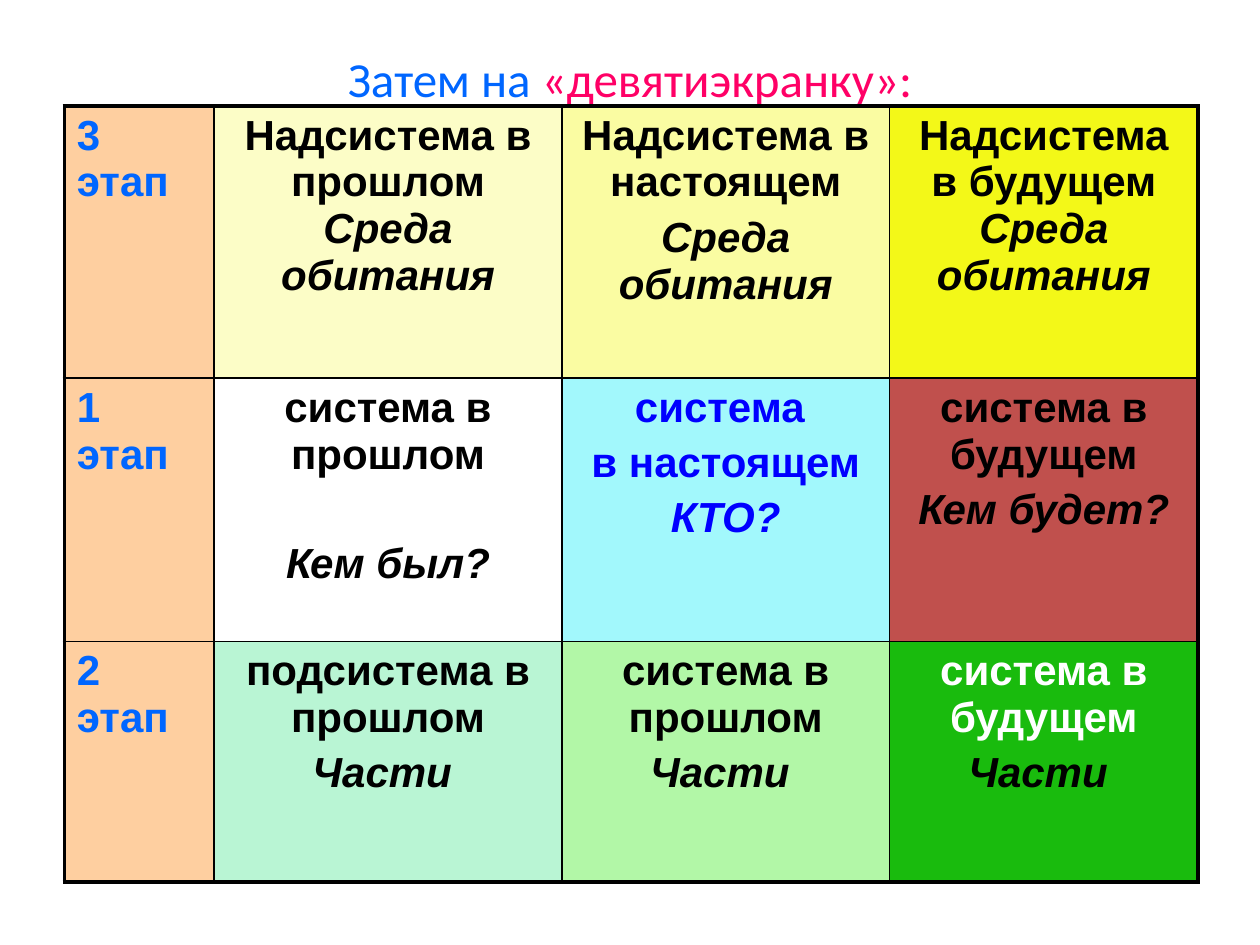
import pptx
import pptx.util
import pptx.dml.color
import pptx.enum.text
import pptx.oxml
import pptx.oxml.ns
from pptx.util import Inches

ALIGN = pptx.enum.text.PP_ALIGN


class Theme:
    head_font, head_size = "Calibri", 28
    cell_font, cell_size = "Arial", 24
    gap, wide_gap = 4.8, 36
    thin, thick = 1, 2.25
    blue, pink, deep = "0066FF", "FF0066", "0000FF"
    black, white = "000000", "FFFFFF"
    peach = "FECFA0"


COLS = [1.19, 2.76, 2.6, 2.45]
ROWS = [2.16, 2.09, 1.91]
ITALIC = True

# Each cell: fill, text colour, paragraphs; each paragraph is a list of
# (text, italic) runs
HABITAT = ("Среда обитания", ITALIC)
PARTS = [("Части ", ITALIC)]


def stage(num):
    return Theme.peach, Theme.blue, [[(f"{num} этап", False)]]


def plain(text):
    return [(text, False)]


GRID = [
    [stage(3),
     ("FCFDC7", Theme.black, [[("Надсистема в прошлом ", False), HABITAT]]),
     ("FAFCA2", Theme.black, [plain("Надсистема в настоящем"), [HABITAT]]),
     ("F3F818", Theme.black, [[("Надсистема в будущем ", False), HABITAT]])],
    [stage(1),
     (Theme.white, Theme.black,
      [plain("система в прошлом"), [("Кем был?", ITALIC)]]),
     ("A2F8FC", Theme.deep,
      [plain("система "), plain("в настоящем"), [("КТО?", ITALIC)]]),
     ("C0504D", Theme.black,
      [plain("система в будущем"), [("Кем будет?", ITALIC)]])],
    [stage(2),
     ("B9F5D4", Theme.black, [plain("подсистема в прошлом"), PARTS]),
     ("B2F7A7", Theme.black, [plain("система в прошлом"), PARTS]),
     ("19BB0D", Theme.white, [plain("система в будущем"), PARTS])],
]
WIDE_CELL = (1, 1)


def rgb(code):
    return pptx.dml.color.RGBColor.from_string(code)


def add_run(para, text, face, size, color):
    run = para.add_run()
    run.text = text
    run.font.name = face
    run.font.size = pptx.util.Pt(size)
    run.font.color.rgb = rgb(color)
    return run


def add_title(slide):
    title = slide.shapes.title
    title.left, title.top = Inches(0.75), Inches(0.33)
    title.width, title.height = Inches(8.5), Inches(0.58)
    frame = title.text_frame
    frame.vertical_anchor = pptx.enum.text.MSO_ANCHOR.MIDDLE
    para = frame.paragraphs[0]
    para.alignment = ALIGN.CENTER
    for text, color in [("Затем на ", Theme.blue),
                        ("«девятиэкранку»:", Theme.pink)]:
        add_run(para, text, Theme.head_font, Theme.head_size, color)


def set_edges(cell, row, col):
    # Outer edges are thick, inner ones thin
    outer = {"L": col == 0, "R": col == len(COLS) - 1,
             "T": row == 0, "B": row == len(ROWS) - 1}
    props = cell._tc.get_or_add_tcPr()
    for side, thick in outer.items():
        width = pptx.util.Pt(Theme.thick if thick else Theme.thin)
        props.append(pptx.oxml.parse_xml(
            f'<a:ln{side} {pptx.oxml.ns.nsdecls("a")} w="{int(width)}">'
            f'<a:solidFill><a:srgbClr val="{Theme.black}"/></a:solidFill>'
            f'</a:ln{side}>'))


def fill_cell(cell, row, col):
    fill, color, paras = GRID[row][col]
    set_edges(cell, row, col)
    cell.fill.solid()
    cell.fill.fore_color.rgb = rgb(fill)
    frame = cell.text_frame
    for num, runs in enumerate(paras):
        para = frame.add_paragraph() if num else frame.paragraphs[0]
        para.alignment = ALIGN.CENTER if col else ALIGN.LEFT
        if num:
            wide = (row, col) == WIDE_CELL
            para.space_before = pptx.util.Pt(
                Theme.wide_gap if wide else Theme.gap)
        for text, italic in runs:
            # Italic notes stay black on the white-text cell
            ink = Theme.black if italic and color == Theme.white else color
            run = add_run(para, text, Theme.cell_font, Theme.cell_size, ink)
            run.font.bold = True
            run.font.italic = italic


def add_grid(slide):
    table = slide.shapes.add_table(
        len(ROWS), len(COLS), Inches(0.51), Inches(0.84),
        Inches(sum(COLS)), Inches(sum(ROWS))).table
    table.first_row = table.horz_banding = False
    for col, width in enumerate(COLS):
        table.columns[col].width = Inches(width)
    for row, height in enumerate(ROWS):
        table.rows[row].height = Inches(height)
        for col in range(len(COLS)):
            fill_cell(table.cell(row, col), row, col)


def main():
    deck = pptx.Presentation()
    deck.slide_width, deck.slide_height = Inches(10), Inches(7.5)
    slide = deck.slides.add_slide(deck.slide_layouts[5])
    add_title(slide)
    add_grid(slide)
    deck.save("out.pptx")


if __name__ == "__main__":
    main()
